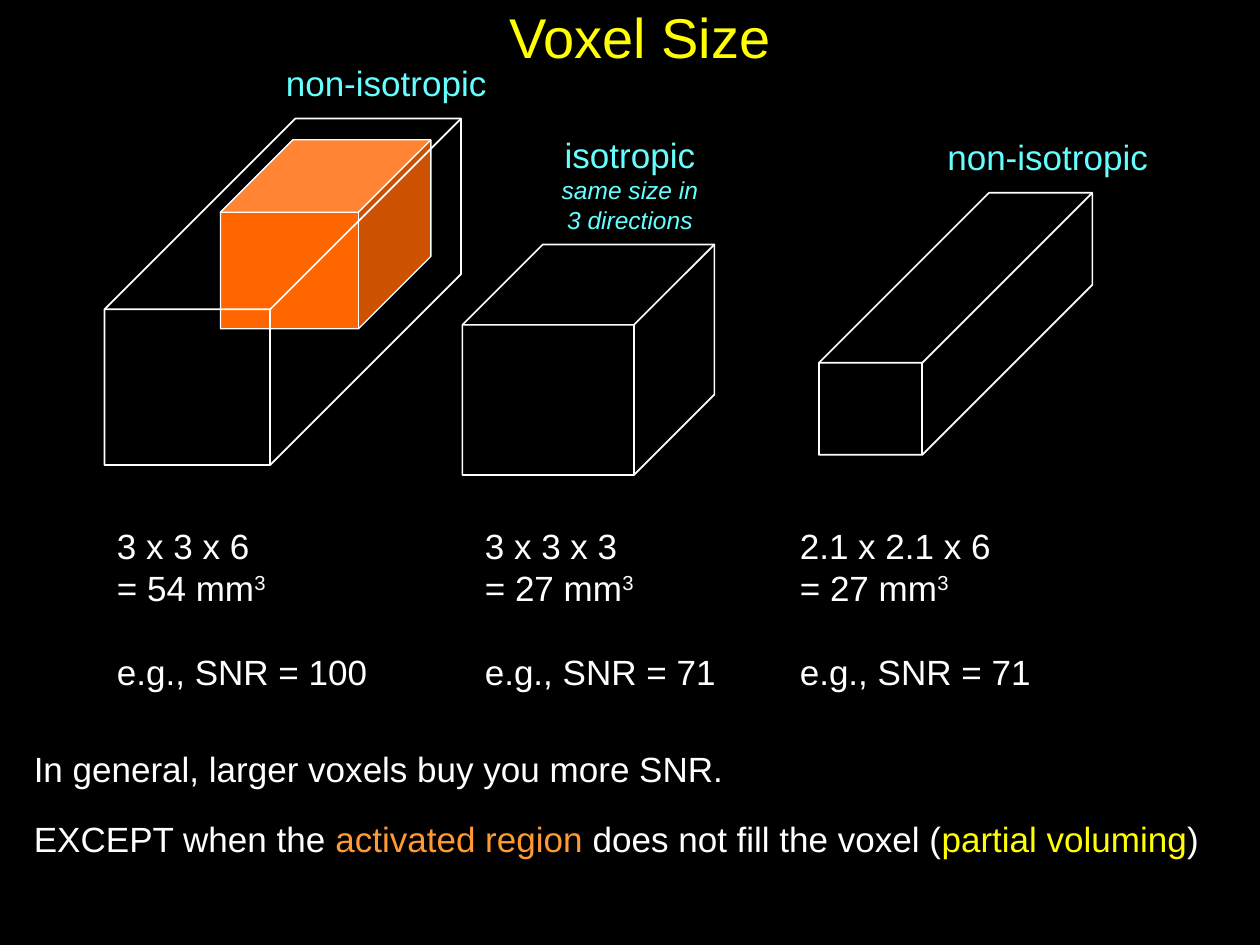
from pptx import Presentation
from pptx.dml.color import RGBColor
from pptx.enum import shapes, text
from pptx.util import Inches, Pt

COLORS = {
    "black": "000000",
    "white": "FFFFFF",
    "yellow": "FFFF00",
    "cyan": "66FFFF",
    "region": "FF6600",
    "region text": "FF9933",
}


def style(span, color, size=20):
    span.font.name = "Arial"
    span.font.size = Pt(size)
    span.font.color.rgb = RGBColor.from_string(COLORS[color])


def add_text(place, lines, color="white", wrap=False):
    """Add a text box with one paragraph per line and return its paragraphs."""
    box = page.shapes.add_textbox(*map(Inches, place))
    frame = box.text_frame
    frame.text = "\n".join(lines)
    frame.word_wrap = wrap
    frame.auto_size = text.MSO_AUTO_SIZE.SHAPE_TO_FIT_TEXT
    for para in frame.paragraphs:
        for span in para.runs:
            style(span, color)
    return frame.paragraphs


deck = Presentation()
deck.slide_width, deck.slide_height = Inches(10), Inches(7.5)
page = deck.slides.add_slide(deck.slide_layouts[5])
page.background.fill.solid()
page.background.fill.fore_color.rgb = RGBColor.from_string(COLORS["black"])

# Title
title = page.shapes.title
title.left, title.top = Inches(0.83), Inches(-0.03)
title.width, title.height = Inches(8.5), Inches(0.63)
title.text_frame.text = "Voxel Size"
title.text_frame.vertical_anchor = text.MSO_ANCHOR.MIDDLE
heading = title.text_frame.paragraphs[0]
heading.alignment = text.PP_ALIGN.CENTER
style(heading.runs[0], "yellow", 32)

# Activated region, then the voxels in front of it
cubes = [
    ((1.75, 1.11, 1.67, 1.5), 0.383, "region", 0.75),
    ((3.67, 1.94, 2, 1.83), 0.349, None, 1),
    ((0.83, 0.94, 2.83, 2.75), 0.551, None, 1),
    ((6.5, 1.53, 2.17, 2.08), 0.649, None, 1),
]
for place, depth, fill, line_width in cubes:
    cube = page.shapes.add_shape(shapes.MSO_SHAPE.CUBE, *map(Inches, place))
    cube.adjustments[0] = depth
    cube.shadow.inherit = False
    if fill:
        cube.fill.solid()
        cube.fill.fore_color.rgb = RGBColor.from_string(COLORS[fill])
    else:
        cube.fill.background()
    cube.line.color.rgb = RGBColor.from_string(COLORS["white"])
    cube.line.width = Pt(line_width)

# Voxel labels
for left, top in [(2.17, 0.44), (7.42, 1.03)]:
    add_text((left, top, 1.79, 0.43), ["non-isotropic"], "cyan")

isotropic = add_text((4.33, 1.01, 1.34, 0.91),
                     ["isotropic", "same size in\v3 directions"], "cyan")
for para in isotropic:
    para.alignment = text.PP_ALIGN.CENTER
for span in isotropic[1].runs:
    span.font.size = Pt(14)
    span.font.italic = True

# Dimensions, volume and SNR of each voxel
measures = [
    (0.83, 2.19, "3 x 3 x 6", 54, 100),
    (3.75, 2.03, "3 x 3 x 3", 27, 71),
    (6.25, 2.03, "2.1 x 2.1 x 6", 27, 71),
]
for left, width, dimensions, volume, snr in measures:
    size, amount, ratio = add_text(
        (left, 4.11, width, 1.43),
        [dimensions, f"= {volume} mm", f"e.g., SNR = {snr}"])
    exponent = amount.add_run()
    exponent.text = "3"
    style(exponent, "white")
    exponent.font._element.set("baseline", "30000")
    ratio.space_before = Pt(24)

# Conclusions
add_text((0.17, 5.88, 9.67, 0.43),
         ["In general, larger voxels buy you more SNR."], wrap=True)
exception = add_text((0.17, 6.44, 9.51, 0.43), ["EXCEPT when the "])[0]
for words, color in [
    ("activated region", "region text"),
    (" does not fill the voxel (", "white"),
    ("partial voluming", "yellow"),
    (")", "white"),
]:
    span = exception.add_run()
    span.text = words
    style(span, color)

deck.save("out.pptx")
